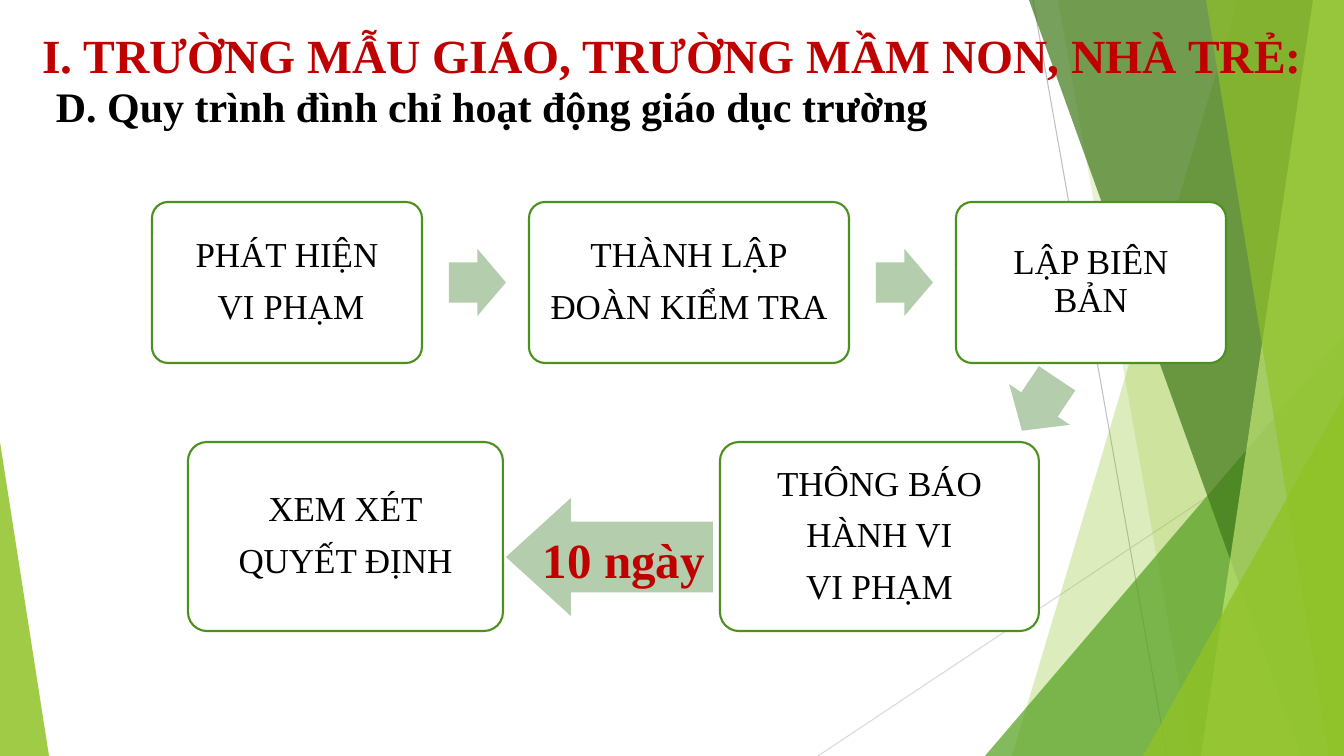
from pptx import Presentation
from pptx.dml.color import RGBColor
from pptx.enum.shapes import MSO_CONNECTOR as Link, MSO_SHAPE as Kind
from pptx.enum.text import MSO_ANCHOR as Anchor, PP_ALIGN as Align
from pptx.oxml.ns import qn
from pptx.util import Pt
from lxml.etree import SubElement

WIDE, HIGH = 1344, 756
SCALE = 12192000 / WIDE
FONT = "Times New Roman"
HUES = {
    "white": "FFFFFF", "black": "000000", "red": "C00000",
    "edge": "4C911E", "arrow": "B4CDAC",
    "lime": "90C226", "leaf": "54A021", "dark": "3F7819", "pale": "C0E474",
    "grey": "BFBFBF", "mist": "D9D9D9",
}


def px(n):
    return round(n * SCALE)


def hue(name):
    return RGBColor.from_string(HUES[name])


def paint(shape, name, alpha=100):
    shape.shadow.inherit = False
    shape.line.fill.background()
    shape.fill.solid()
    shape.fill.fore_color.rgb = hue(name)
    if alpha < 100:
        clr = next(shape._element.spPr.iter(qn("a:srgbClr")))
        SubElement(clr, qn("a:alpha")).set("val", str(alpha * 1000))


def place(shape, box):
    shape.left, shape.top, shape.width, shape.height = map(px, box)


def style(para, size, name, bold=False):
    font = para.font
    font.name, font.size, font.bold = FONT, Pt(size), bold
    font.color.rgb = hue(name)


def ray(slide, name, ends):
    line = slide.shapes.add_connector(Link.STRAIGHT, *map(px, ends))
    line.line.color.rgb = hue(name)
    line.line.width = Pt(0.75)
    SubElement(line._element.spPr, qn("a:effectLst"))


def facet(slide, name, alpha, top, foot):
    pen = slide.shapes.build_freeform(px(top), 0)
    pen.add_line_segments([(px(x), px(y)) for x, y in
                           [(WIDE, 0), (WIDE, HIGH), (foot, HIGH)]])
    paint(pen.convert_to_shape(), name, alpha)


def wedge(slide, name, alpha, left, top, wide, apex):
    box = left, top, wide, HIGH - top
    shape = slide.shapes.add_shape(Kind.ISOSCELES_TRIANGLE, *map(px, box))
    shape.adjustments[0] = apex
    paint(shape, name, alpha)


def decor(slide):
    ray(slide, "grey", (1033, 0, 1167, HIGH))
    ray(slide, "mist", (WIDE, 406, 818, HIGH))
    facet(slide, "lime", 30, 1238, 1012)
    facet(slide, "lime", 20, 1058, 1192)
    wedge(slide, "leaf", 72, 985, 336, 359, 1)
    facet(slide, "dark", 70, 1029, 1301)
    facet(slide, "pale", 70, 1313, 1201)
    facet(slide, "lime", 65, 1206, 1329)
    wedge(slide, "lime", 80, 1143, 396, 201, 1)
    wedge(slide, "lime", 85, 0, 442, 49, 0)


def label(slide, box, text, size, name, align):
    shape = slide.shapes.add_textbox(*map(px, box))
    frame = shape.text_frame
    frame.word_wrap = True
    frame.text = text
    para = frame.paragraphs[0]
    para.alignment = align
    style(para, size, name, True)


def head(slide, box):
    left, top, wide, high = box
    title = slide.shapes.title
    slide.shapes._spTree.append(title._element)
    place(title, (left, top, wide, high))
    frame = title.text_frame
    frame.text = "I. TRƯỜNG MẪU GIÁO, TRƯỜNG MẦM NON, NHÀ TRẺ:"
    frame.vertical_anchor = Anchor.TOP
    frame.word_wrap = True
    para = frame.paragraphs[0]
    para.alignment = Align.LEFT
    style(para, 34, "red", True)
    label(slide, (left + 14, top + 55, wide - 50, 61),
          "D. Quy trình đình chỉ hoạt động giáo dục trường",
          30, "black", Align.LEFT)


def step(slide, box, lines):
    shape = slide.shapes.add_shape(Kind.ROUNDED_RECTANGLE, *map(px, box))
    shape.adjustments[0] = 0.1
    paint(shape, "white")
    shape.line.color.rgb = hue("edge")
    shape.line.width = Pt(1.5)
    frame = shape.text_frame
    frame.word_wrap = True
    frame.vertical_anchor = Anchor.MIDDLE
    frame.margin_left = frame.margin_right = px(14)
    frame.margin_top = frame.margin_bottom = px(15)
    frame.text = "\n".join(lines)
    for para in frame.paragraphs:
        para.alignment = Align.CENTER
        para.line_spacing = 0.9
        para.space_after = Pt(10)
        style(para, 25, "black")


def arrow(slide, kind, box, neck=0.5, turn=0):
    shape = slide.shapes.add_shape(kind, *map(px, box))
    shape.adjustments[0] = 0.6
    shape.adjustments[1] = neck
    shape.rotation = turn
    paint(shape, "arrow")


def flow(slide, box):
    left, top, wide, high = box
    row = [(270, ["PHÁT HIỆN", " VI PHẠM"]),
           (320, ["THÀNH LẬP", "ĐOÀN KIỂM TRA"]),
           (270, ["LẬP BIÊN BẢN"])]
    gap = (wide - sum(w for w, _ in row)) / (len(row) - 1)
    x = left
    for i, (w, lines) in enumerate(row):
        if i:
            arrow(slide, Kind.RIGHT_ARROW, (x - gap + 27, top + 47, 57, 67))
        step(slide, (x, top, w, 161), lines)
        x += w + gap
    low = top + high - 189
    step(slide, (left + 36, low, 315, 189), ["XEM XÉT", "QUYẾT ĐỊNH"])
    arrow(slide, Kind.LEFT_ARROW, (left + 354, low + 56, 207, 118), 0.55)
    step(slide, (left + 568, low, 319, 189),
         ["THÔNG BÁO", "HÀNH VI", "VI PHẠM"])
    arrow(slide, Kind.RIGHT_ARROW, (left + 856, top + 166, 63, 73), 0.5, 123.8)
    label(slide, (left + 368, low + 83, 208, 70), "10 ngày",
          35, "red", Align.CENTER)


def main():
    deck = Presentation()
    deck.slide_width, deck.slide_height = px(WIDE), px(HIGH)
    slide = deck.slides.add_slide(deck.slide_layouts[5])
    decor(slide)
    head(slide, (32, 21, 1312, 63))
    flow(slide, (152, 202, 1074, 429))
    deck.save("out.pptx")


if __name__ == "__main__":
    main()
